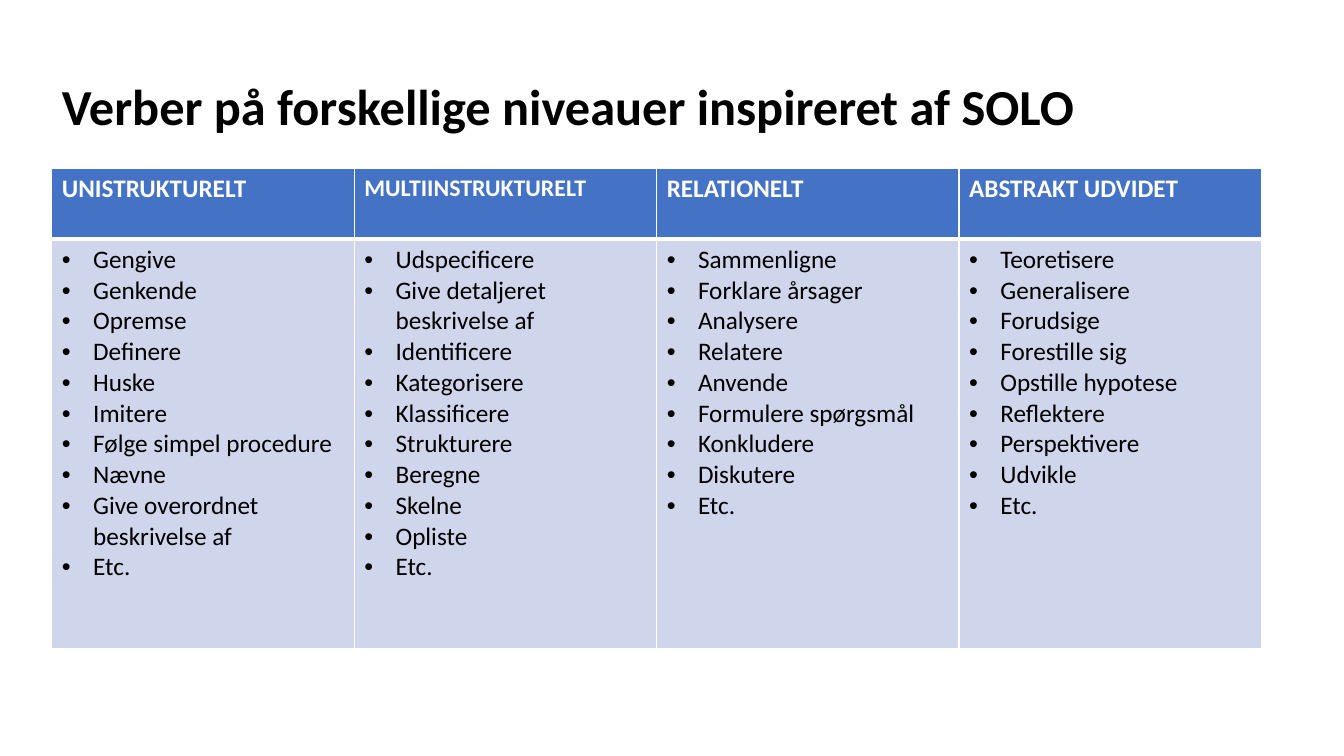
"""Build a slide with a table of verbs at the four SOLO levels."""
from dataclasses import dataclass

from lxml.etree import SubElement
from pptx import Presentation
from pptx.dml.color import RGBColor
from pptx.enum.text import MSO_ANCHOR
from pptx.oxml.ns import qn
from pptx.slide import Slide
from pptx.table import _Cell
from pptx.text.text import _Paragraph
from pptx.util import Inches, Pt

SLIDE_W, SLIDE_H = Inches(13.33), Inches(7.5)
BLACK = RGBColor(0x00, 0x00, 0x00)
WHITE = RGBColor(0xFF, 0xFF, 0xFF)
HEADER_BLUE = RGBColor(0x44, 0x72, 0xC4)
BODY_BLUE = RGBColor(0xCF, 0xD5, 0xEA)
FONT = "Calibri"
TITLE = "Verber på forskellige niveauer inspireret af SOLO"
TITLE_FORMAT = {"name": FONT, "size": Pt(36), "bold": True}
HEADER_FORMAT = {"name": FONT, "bold": True}
BODY_FORMAT = {"name": FONT, "size": Pt(18), "bold": False}
HEADER_BORDERS = {"a:lnL": 1, "a:lnR": 1, "a:lnT": 1, "a:lnB": 3}
BODY_BORDERS = {"a:lnL": 1, "a:lnR": 1, "a:lnT": 3, "a:lnB": 1}
LEFT = 3.86
TITLE_TOP, TITLE_WIDTH, TITLE_HEIGHT = 11.07, 92.1, 6.8
TABLE_TOP, TABLE_WIDTH = 22.3, 90
HEADER_HEIGHT, BODY_HEIGHT = 9.35, 54.1
BULLET_INDENT = Inches(0.31)


@dataclass(frozen=True)
class Level:
    """A SOLO level with its verbs."""

    name: str
    verbs: tuple[str, ...]
    size: int = 18


LEVELS = (
    Level("UNISTRUKTURELT", (
        "Gengive", "Genkende", "Opremse", "Definere", "Huske", "Imitere",
        "Følge simpel procedure", "Nævne", "Give overordnet beskrivelse af", "Etc.")),
    Level("MULTIINSTRUKTURELT", (
        "Udspecificere", "Give detaljeret beskrivelse af", "Identificere",
        "Kategorisere", "Klassificere", "Strukturere", "Beregne", "Skelne",
        "Opliste", "Etc."), size=17),
    Level("RELATIONELT", (
        "Sammenligne", "Forklare årsager", "Analysere", "Relatere", "Anvende",
        "Formulere spørgsmål", "Konkludere", "Diskutere", "Etc.")),
    Level("ABSTRAKT UDVIDET", (
        "Teoretisere", "Generalisere", "Forudsige", "Forestille sig",
        "Opstille hypotese", "Reflektere", "Perspektivere", "Udvikle", "Etc.")),
)


def across(percent: float) -> int:
    """Return a share of the slide's width."""
    return round(SLIDE_W * percent / 100)


def down(percent: float) -> int:
    """Return a share of the slide's height."""
    return round(SLIDE_H * percent / 100)


def write(p: _Paragraph, text: str, color: RGBColor, font_format: dict) -> None:
    """Add a formatted run to a paragraph."""
    r = p.add_run()
    r.text = text
    for name, value in font_format.items():
        setattr(r.font, name, value)
    r.font.color.rgb = color


def add_bullet(p: _Paragraph) -> None:
    """Give a paragraph a hanging bullet."""
    pPr = p._p.get_or_add_pPr()
    pPr.set("marL", str(BULLET_INDENT))
    pPr.set("indent", str(-BULLET_INDENT))
    SubElement(pPr, qn("a:buFont"), typeface="Arial")
    SubElement(pPr, qn("a:buChar"), char="•")


def style_cell(cell: _Cell, fill: RGBColor, borders: dict[str, int]) -> None:
    """Set the white borders and the fill of a cell."""
    tcPr = cell._tc.get_or_add_tcPr()
    for tag, width in borders.items():
        ln = SubElement(tcPr, qn(tag), w=str(Pt(width)))
        SubElement(SubElement(ln, qn("a:solidFill")), qn("a:srgbClr"), val=str(WHITE))
    cell.fill.solid()
    cell.fill.fore_color.rgb = fill


def add_title(slide: Slide) -> None:
    """Add the slide's heading."""
    sp = slide.shapes.add_textbox(
        across(LEFT), down(TITLE_TOP), across(TITLE_WIDTH), down(TITLE_HEIGHT))
    tf = sp.text_frame
    tf.word_wrap = True
    tf.vertical_anchor = MSO_ANCHOR.MIDDLE
    p = tf.paragraphs[0]
    p.line_spacing = 0.9
    write(p, TITLE, BLACK, TITLE_FORMAT)


def add_levels(slide: Slide, levels: tuple[Level, ...]) -> None:
    """Add the table with one column for each level."""
    table = slide.shapes.add_table(
        2, len(levels), across(LEFT), down(TABLE_TOP), across(TABLE_WIDTH),
        down(HEADER_HEIGHT + BODY_HEIGHT)).table
    for row, height in zip(table.rows, (HEADER_HEIGHT, BODY_HEIGHT)):
        row.height = down(height)
    for col, level in enumerate(levels):
        table.columns[col].width = across(TABLE_WIDTH / len(levels))
        header, body = table.cell(0, col), table.cell(1, col)
        style_cell(header, HEADER_BLUE, HEADER_BORDERS)
        style_cell(body, BODY_BLUE, BODY_BORDERS)
        write(header.text_frame.paragraphs[0], level.name, WHITE,
              HEADER_FORMAT | {"size": Pt(level.size)})
        tf = body.text_frame
        for i, verb in enumerate(level.verbs):
            p = tf.add_paragraph() if i else tf.paragraphs[0]
            add_bullet(p)
            write(p, verb, BLACK, BODY_FORMAT)


def main() -> None:
    """Build and save the presentation."""
    prs = Presentation()
    prs.slide_width, prs.slide_height = SLIDE_W, SLIDE_H
    slide = prs.slides.add_slide(prs.slide_layouts[6])
    add_title(slide)
    add_levels(slide, LEVELS)
    prs.save("out.pptx")


if __name__ == "__main__":
    main()
